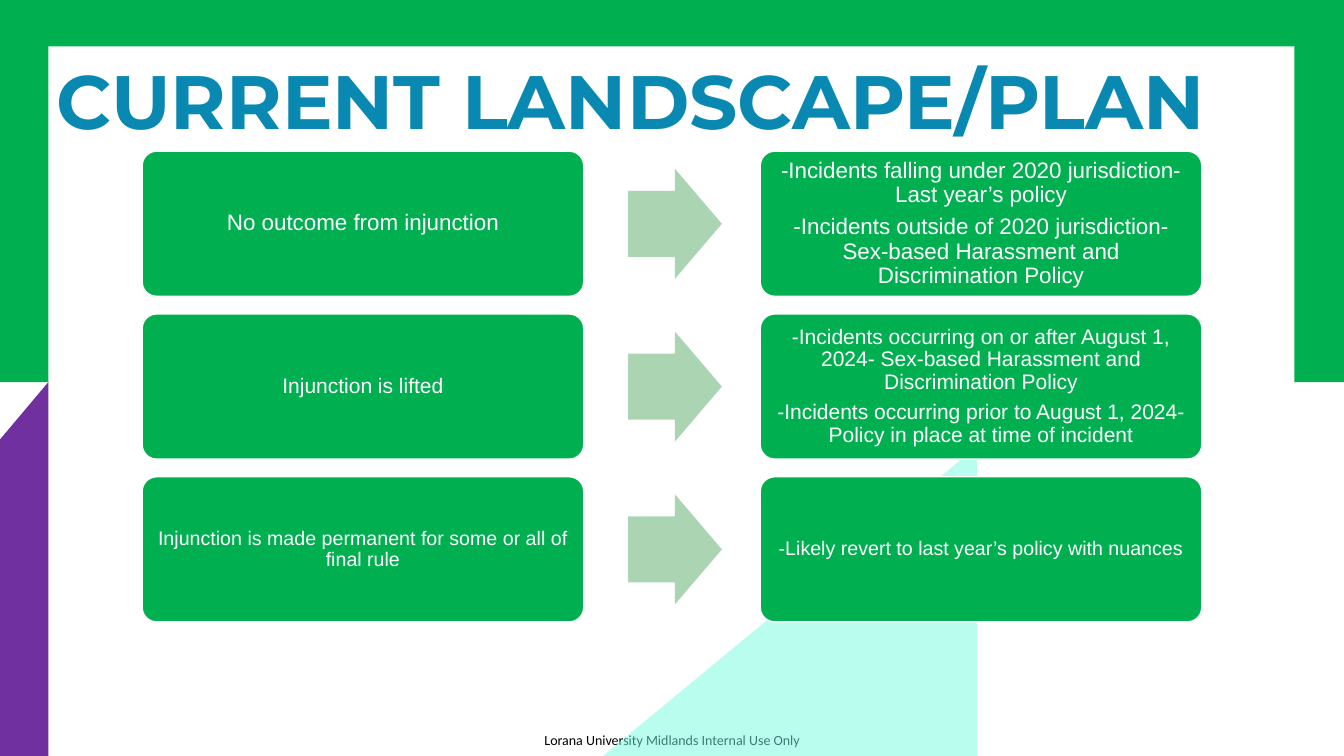
"""Build the slide that maps each injunction outcome to the policy that applies."""
from lxml import etree
from pptx import Presentation
from pptx.dml.color import RGBColor
from pptx.enum import shapes, text
from pptx.oxml import ns
from pptx.util import Inches, Pt

GREEN, WHITE, PURPLE, MINT = "00B050", "FFFFFF", "7030A0", "72FDDF"
SAGE, BLUE, BLACK = "ABD4B3", "0989B1", "000000"
KIND = shapes.MSO_SHAPE

ROWS = [
    (16, 0.07, ["No outcome from injunction"],
     ["-Incidents falling under 2020 jurisdiction- Last year’s policy",
      "-Incidents outside of 2020 jurisdiction- Sex-based Harassment and Discrimination Policy"]),
    (15, 0.06, ["Injunction is lifted"],
     ["-Incidents occurring on or after August 1, 2024- Sex-based Harassment and Discrimination Policy",
      "-Incidents occurring prior to August 1, 2024- Policy in place at time of incident"]),
    (14, 0.06, ["Injunction is made permanent for some or all of final rule"],
     ["-Likely revert to last year’s policy with nuances"]),
]


def color(code):
    """Turn a hex string into a colour."""
    return RGBColor.from_string(code)


def paint(shape, fill, edge=None):
    """Give a shape a flat fill and an optional thin outline."""
    shape.shadow.inherit = False
    shape.fill.solid()
    shape.fill.fore_color.rgb = color(fill)
    if edge:
        shape.line.color.rgb = color(edge)
        shape.line.width = Pt(1)
    else:
        shape.line.fill.background()
    return shape


def block(slide, kind, box, fill, edge=None):
    """Add a painted preset shape."""
    return paint(slide.shapes.add_shape(kind, *map(Inches, box)), fill, edge)


def outline(slide, points, fill, alpha=None):
    """Add a closed polygon, with opacity in percent if given."""
    first, *rest = [(Inches(x), Inches(y)) for x, y in points]
    pen = slide.shapes.build_freeform(*first)
    pen.add_line_segments(rest, close=True)
    shape = paint(pen.convert_to_shape(), fill)
    if alpha:
        tint = next(shape.fill._xPr.iter(ns.qn("a:srgbClr")))
        etree.SubElement(tint, ns.qn("a:alpha"), val=str(alpha * 1000))


def style(para, font, size, ink, bold=False):
    """Set the font of a paragraph."""
    para.font.name, para.font.size, para.font.bold = font, Pt(size), bold
    para.font.color.rgb = color(ink)


def inset(frame, side, top):
    """Set the inner margins of a text frame."""
    frame.margin_left = frame.margin_right = Inches(side)
    frame.margin_top = frame.margin_bottom = Inches(top)


def label(slide, box, words, margins, *look):
    """Add a text box with one styled line."""
    frame = slide.shapes.add_textbox(*map(Inches, box)).text_frame
    frame.word_wrap = True
    inset(frame, *margins)
    frame.text = words
    style(frame.paragraphs[0], *look)


def card(slide, left, top, lines, size, pad):
    """Add a rounded green card with centred text."""
    shape = block(slide, KIND.ROUNDED_RECTANGLE, (left, top, 4.38, 1.44), GREEN, WHITE)
    shape.adjustments[0] = 0.1
    frame = shape.text_frame
    frame.word_wrap = True
    frame.vertical_anchor = text.MSO_ANCHOR.MIDDLE
    inset(frame, pad, pad)
    frame.text = "\n".join(lines)
    for para in frame.paragraphs:
        para.alignment = text.PP_ALIGN.CENTER
        para.line_spacing = 0.9
        style(para, "Arial", size, WHITE)
    for para in frame.paragraphs[:-1]:
        para.space_after = Pt(0.35 * size)


def arrow(slide, top):
    """Add the arrow between two cards."""
    shape = block(slide, KIND.RIGHT_ARROW, (6.23, top, 0.93, 1.09), SAGE)
    shape.adjustments[0] = 0.6


def main():
    """Build and save the slide."""
    deck = Presentation()
    deck.slide_width, deck.slide_height = Inches(13.33), Inches(7.5)
    slide = deck.slides.add_slide(deck.slide_layouts[6])
    label(slide, (5.4, 7.26, 2.7, 0.17), "Lorana University Midlands Internal Use Only",
          (0, 0), "Calibri", 10, BLACK)
    block(slide, KIND.RECTANGLE, (-0.03, 0, 13.36, 3.79), GREEN)
    block(slide, KIND.RECTANGLE, (0.48, 0.46, 12.36, 6.59), WHITE)
    outline(slide, [(5.98, 7.5), (9.69, 4.43), (9.69, 7.5)], MINT, 50)
    outline(slide, [(0.48, 3.79), (0.48, 7.5), (0, 7.5), (0, 4.36)], PURPLE)
    label(slide, (0.46, 0.49, 12.4, 1.01), "CURRENT LANDSCAPE/PLAN",
          (0.1, 0.05), "Montserrat", 54, BLUE, True)
    for row, (size, pad, case, plan) in enumerate(ROWS):
        top = 1.5 + row * 1.615
        card(slide, 1.41, top, case, size, pad)
        arrow(slide, top + 0.175)
        card(slide, 7.54, top, plan, size, pad)
    deck.save("out.pptx")


if __name__ == "__main__":
    main()
